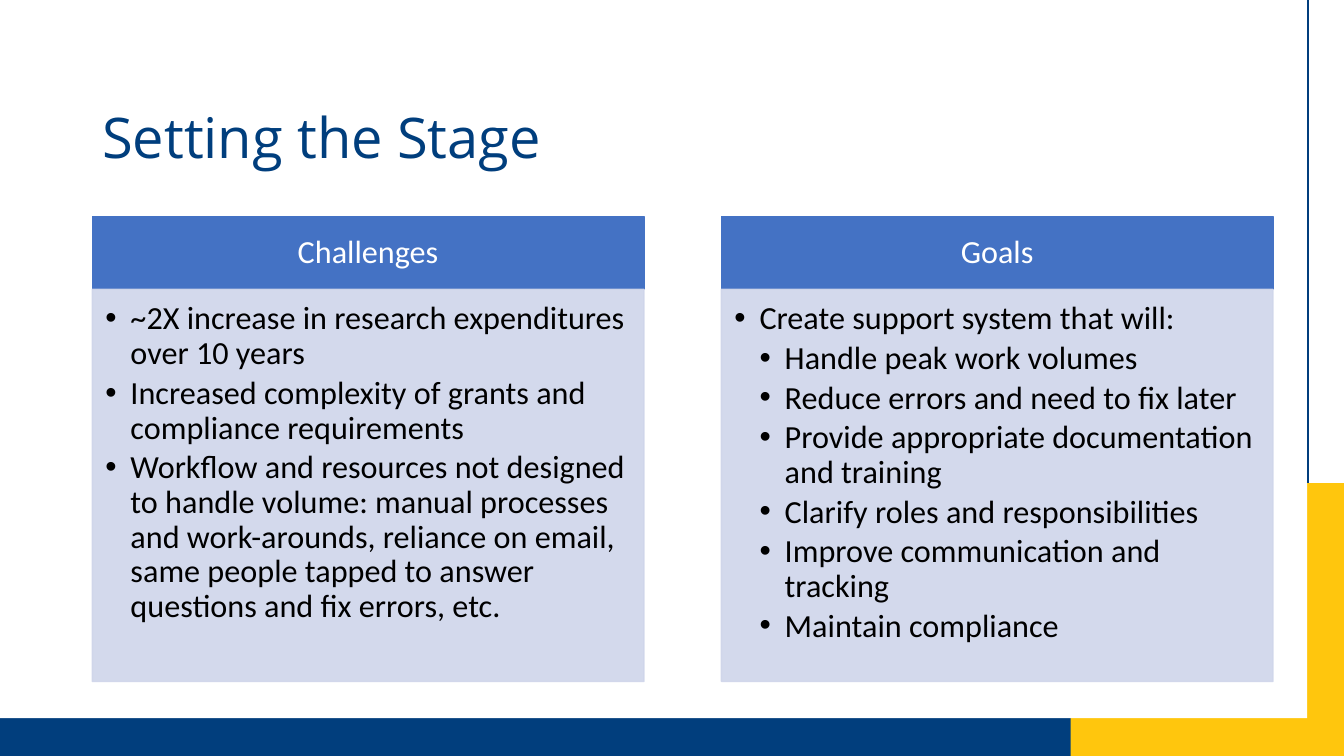
import pptx
import pptx.util
import pptx.dml.color
import pptx.enum.shapes
import pptx.enum.text
import pptx.oxml.ns
import lxml.etree

Pt = pptx.util.Pt
qn = pptx.oxml.ns.qn
Align = pptx.enum.text.PP_ALIGN
Anchor = pptx.enum.text.MSO_ANCHOR


def paint(color_format, color, alpha=100):
    color_format.rgb = pptx.dml.color.RGBColor.from_string(color)


def write(box, lines, size=23, font="Calibri", color="000000", align=Align.LEFT,
          anchor=Anchor.TOP, insets=(7.2, 3.6, 7.2, 3.6), after=0, bullet=None):
    frame = box.text_frame
    frame.word_wrap = True
    frame.vertical_anchor = anchor
    frame.margin_left, frame.margin_top, frame.margin_right, frame.margin_bottom = map(Pt, insets)
    for index, (level, text) in enumerate(lines):
        paragraph = frame.add_paragraph() if index else frame.paragraphs[0]
        paragraph.alignment = align
        paragraph.line_spacing = 0.9
        paragraph.space_after = Pt(after)
        run = paragraph.add_run()
        run.text = text
        run.font.size = Pt(size)
        run.font.name = font
        run.font.color.rgb = pptx.dml.color.RGBColor.from_string(color)
        if bullet:
            paragraph.level = level
            properties = paragraph._p.get_or_add_pPr()
            properties.set("marL", str(Pt(18 * level)))
            properties.set("indent", str(-Pt(18)))
            lxml.etree.SubElement(properties, qn("a:buFont")).set("typeface", "Arial")
            lxml.etree.SubElement(properties, qn("a:buChar")).set("char", bullet)


deck = pptx.Presentation()
deck.slide_width, deck.slide_height = Pt(960), Pt(540)
slide = deck.slides.add_slide(deck.slide_layouts[6])


def add_block(left, top, width, height, color, outlined=False, opacity=100):
    block = slide.shapes.add_shape(pptx.enum.shapes.MSO_SHAPE.RECTANGLE,
                                   Pt(left), Pt(top), Pt(width), Pt(height))
    block.shadow.inherit = False
    rgb = pptx.dml.color.RGBColor.from_string(color)
    block.fill.solid()
    block.fill.fore_color.rgb = rgb
    if outlined:
        block.line.color.rgb = rgb
        block.line.width = Pt(1)
    else:
        block.line.fill.background()
    if opacity < 100:
        for tint in block._element.spPr.iter(qn("a:srgbClr")):
            lxml.etree.SubElement(tint, qn("a:alpha")).set("val", str(opacity * 1000))
    return block


navy, gold, white = "013E7D", "FFC60D", "FFFFFF"
add_block(0, 513, 960, 27, navy)
add_block(764.7, 345, 195.3, 195, gold)
add_block(0, 0, 933.8, 513, white)

edge = slide.shapes.add_connector(pptx.enum.shapes.MSO_CONNECTOR.STRAIGHT,
                                  Pt(934.5), Pt(0), Pt(934.5), Pt(345))
edge.line.color.rgb = pptx.dml.color.RGBColor.from_string(navy)
edge.line.width = Pt(1.5)
lxml.etree.SubElement(edge._element.spPr, qn("a:effectLst"))

title = slide.shapes.add_textbox(Pt(66), Pt(48), Pt(828), Pt(104.4))
write(title, [(0, "Setting the Stage")], size=40, font="Open Sans", color="003E7D",
      anchor=Anchor.MIDDLE)

columns = [
    ("Challenges", [
        (1, "~2X increase in research expenditures over 10 years"),
        (1, "Increased complexity of grants and compliance requirements"),
        (1, "Workflow and resources not designed to handle volume: manual processes and "
            "work-arounds, reliance on email, same people tapped to answer questions and "
            "fix errors, etc."),
    ]),
    ("Goals", [
        (1, "Create support system that will:"),
        (2, "Handle peak work volumes"),
        (2, "Reduce errors and need to fix later"),
        (2, "Provide appropriate documentation and training"),
        (2, "Clarify roles and responsibilities"),
        (2, "Improve communication and tracking"),
        (2, "Maintain compliance"),
    ]),
]
for position, (heading, points) in enumerate(columns):
    left = 66 + 449.3 * position
    header = add_block(left, 154.7, 394, 51.9, "4472C4", outlined=True)
    write(header, [(0, heading)], color=white, align=Align.CENTER, anchor=Anchor.MIDDLE,
          insets=(13, 7.4, 13, 7.4))
    body = add_block(left, 206.6, 394, 280.2, "CFD5EA", outlined=True, opacity=90)
    write(body, points, insets=(9.2, 9.2, 13, 14.4), after=3.45, bullet="•")

deck.save("out.pptx")
